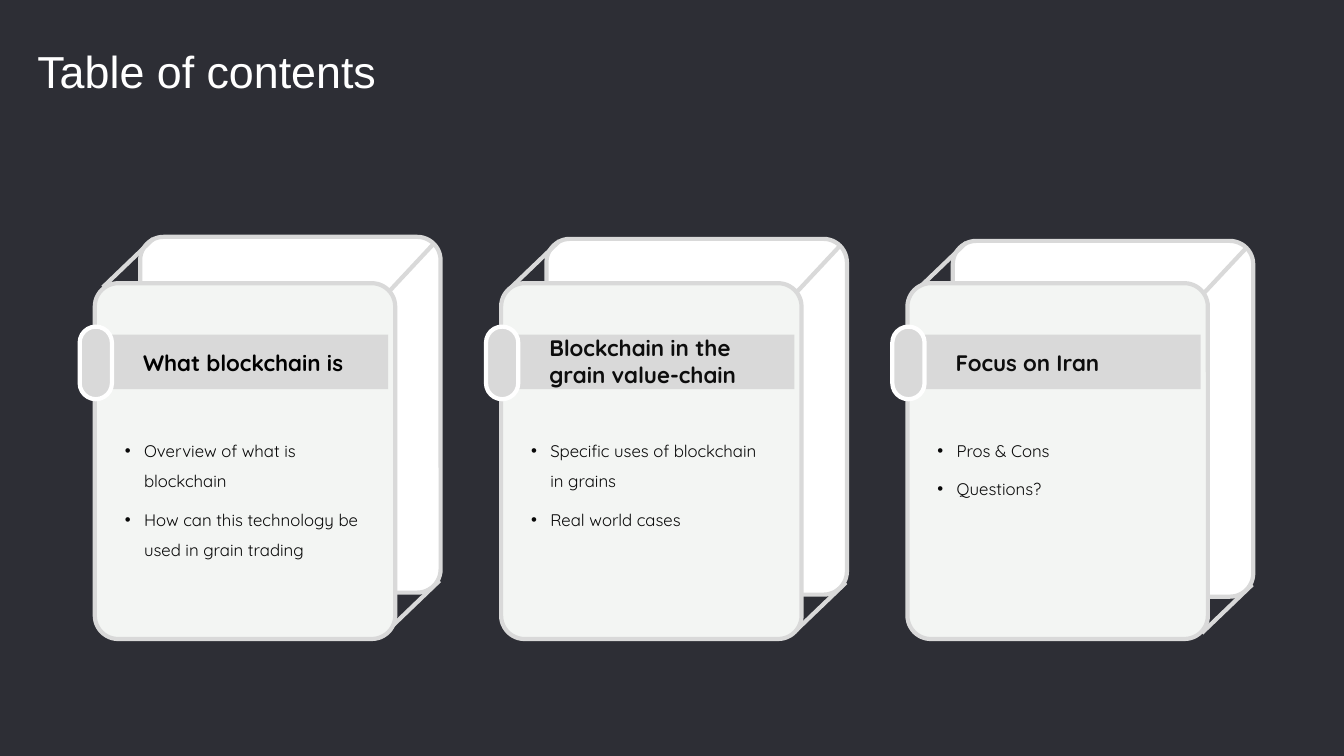
"""Builds a table-of-contents slide with three books on a grid of tenth-inch cells."""
from dataclasses import dataclass

from lxml import etree
from pptx import Presentation
from pptx import util as u
from pptx.dml.color import RGBColor
from pptx.enum import shapes, text
from pptx.oxml.ns import qn

DARK = RGBColor(0x2D, 0x2E, 0x35)
WHITE = RGBColor(0xFF, 0xFF, 0xFF)
GREY = RGBColor(0xD9, 0xD9, 0xD9)
COVER = RGBColor(0xF3, 0xF5, 0xF3)
BODY = RGBColor(0x08, 0x08, 0x08)
BLACK = RGBColor(0x00, 0x00, 0x00)
INK = RGBColor(0x0D, 0x0D, 0x0D)

COLS, ROWS = 133.3, 75
CELL = u.Inches(0.1)
FIRST_COL, PITCH, COVER_ROW = 9.4, 40.3, 28.1
BOOK_W, BOOK_H = 29.8, 35.3
EDGES = ((-3.7, 5, 1.3, 0.2), (24.8, 5.3, 29.1, 0.7), (24.7, 38.9, 29.7, 34.1))
LINE_PT = 3


@dataclass(frozen=True)
class Box:
    """A rectangle in grid columns and rows."""
    col: float
    row: float
    w: float
    h: float

    def emu(self) -> list[int]:
        """Gives left, top, width and height in EMU."""
        return [cells(v) for v in (self.col, self.row, self.w, self.h)]


@dataclass(frozen=True)
class Book:
    """One section of the contents."""
    heading: str
    points: tuple[str, ...]
    back_row: float
    heading_row: float
    heading_w: float
    heading_h: float
    list_w: float
    list_h: float
    ink: RGBColor = INK


BOOKS = (
    Book("What blockchain is",
         ("Overview of what is blockchain", "How can this technology be used in grain trading"),
         23.5, 34.1, 24.5, 3.7, 25.2, 13.6, BLACK),
    Book("Blockchain in the grain value-chain",
         ("Specific uses of blockchain in grains", "Real world cases"),
         23.7, 32.7, 23.9, 6.4, 25.7, 10.6),
    Book("Focus on Iran", ("Pros & Cons", "Questions?"),
         23.9, 34.1, 20.9, 3.7, 22.6, 7.5),
)


def cells(n: float) -> int:
    """Converts grid cells to EMU."""
    return round(n * CELL)


def apply(target, formats: dict) -> None:
    """Sets each named attribute."""
    for name, value in formats.items():
        setattr(target, name, value)


def add_panel(s, box: Box, fill: RGBColor, line: RGBColor | None = None,
              radius: float = 0) -> None:
    """Draws a rectangle, rounded when a radius is given."""
    kind = shapes.MSO_SHAPE.ROUNDED_RECTANGLE if radius else shapes.MSO_SHAPE.RECTANGLE
    sp = s.shapes.add_shape(kind, *box.emu())
    sp.shadow.inherit = False
    sp.fill.solid()
    sp.fill.fore_color.rgb = fill
    if radius:
        sp.adjustments[0] = radius
    if line is None:
        sp.line.fill.background()
    else:
        sp.line.color.rgb = line
        sp.line.width = u.Pt(LINE_PT)


def add_edge(s, x1: float, y1: float, x2: float, y2: float) -> None:
    """Draws a straight edge of a book."""
    cx = s.shapes.add_connector(shapes.MSO_CONNECTOR.STRAIGHT, *map(cells, (x1, y1, x2, y2)))
    cx.line.color.rgb = GREY
    cx.line.width = u.Pt(LINE_PT)
    etree.SubElement(cx._element.spPr, qn("a:effectLst"))


def add_bullet(p) -> None:
    """Gives a paragraph a hanging bullet and open spacing."""
    apply(p, {"line_spacing": 1.5, "space_after": u.Pt(6)})
    pPr = p._p.get_or_add_pPr()
    indent = u.Inches(0.19)
    pPr.set("marL", str(indent))
    pPr.set("indent", str(-indent))
    etree.SubElement(pPr, qn("a:buFont"), typeface="Arial")
    etree.SubElement(pPr, qn("a:buChar"), char="•")


def add_text(s, box: Box, lines: tuple[str, ...], font: dict, color: RGBColor,
             bullets: bool = False, frame: dict | None = None) -> None:
    """Adds a wrapped text box with one paragraph per line."""
    tf = s.shapes.add_textbox(*box.emu()).text_frame
    apply(tf, {"word_wrap": True, "auto_size": text.MSO_AUTO_SIZE.SHAPE_TO_FIT_TEXT,
               **(frame or {})})
    for i, line in enumerate(lines):
        p = tf.paragraphs[0] if i == 0 else tf.add_paragraph()
        if bullets:
            add_bullet(p)
        r = p.add_run()
        r.text = line
        apply(r.font, font)
        r.font.color.rgb = color


def add_book(s, col: float, book: Book) -> None:
    """Draws a book with its label, heading and points."""
    back_col = col + 4.5
    add_panel(s, Box(back_col, book.back_row, BOOK_W, BOOK_H), WHITE, GREY, 0.078)
    for x1, y1, x2, y2 in EDGES:
        add_edge(s, back_col + x1, book.back_row + y1, back_col + x2, book.back_row + y2)
    add_panel(s, Box(col, COVER_ROW, BOOK_W, BOOK_H), COVER, GREY, 0.078)
    add_panel(s, Box(col + 1.5, 33.2, 27.6, 5.4), GREY)
    add_text(s, Box(col + 2, 42.2, book.list_w, book.list_h), book.points,
             {"name": "Quicksand", "size": u.Pt(12)}, BODY, bullets=True)
    add_text(s, Box(col + 3.8, book.heading_row, book.heading_w, book.heading_h),
             (book.heading,), {"name": "Quicksand", "size": u.Pt(16), "bold": True}, book.ink)
    add_panel(s, Box(col - 1.5, 32.4, 3.2, 7.2), GREY, WHITE, 0.5)


def main() -> None:
    """Builds and saves the slide."""
    prs = Presentation()
    apply(prs, {"slide_width": cells(COLS), "slide_height": cells(ROWS)})
    s = prs.slides.add_slide(prs.slide_layouts[6])
    s.background.fill.solid()
    s.background.fill.fore_color.rgb = DARK
    for i, book in enumerate(BOOKS):
        add_book(s, FIRST_COL + i * PITCH, book)
    margins = dict.fromkeys(("margin_left", "margin_top", "margin_right", "margin_bottom"),
                            u.Inches(0.07))
    add_text(s, Box(3, 3.6, 71.5, 6.7), ("Table of contents",),
             {"name": "Arial", "size": u.Pt(32)}, WHITE, frame=margins)
    prs.save("out.pptx")


if __name__ == "__main__":
    main()
